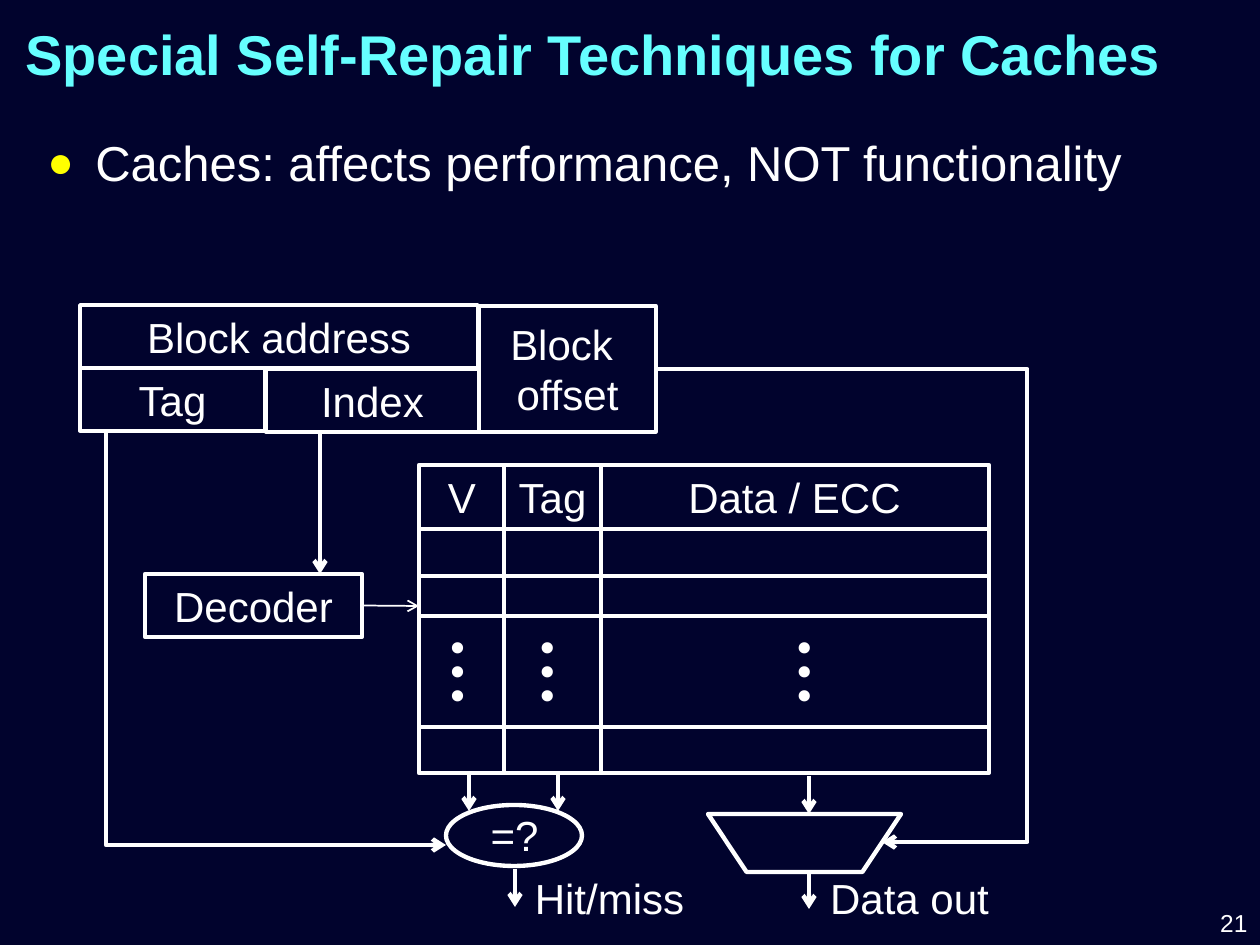
import pptx
import pptx.dml.color
import pptx.enum.shapes
import pptx.enum.text
import pptx.oxml.ns
import pptx.util
from lxml import etree

PX = 914400 / 126
WHITE = "FFFFFF"
SHAPE = pptx.enum.shapes.MSO_SHAPE
CONNECTOR = pptx.enum.shapes.MSO_CONNECTOR
ALIGN = pptx.enum.text.PP_ALIGN
ANCHOR = pptx.enum.text.MSO_ANCHOR
AUTO = pptx.enum.text.MSO_AUTO_SIZE
qn = pptx.oxml.ns.qn


def emu(*lengths):
    return [round(n * PX) for n in lengths]


def rgb(value):
    return pptx.dml.color.RGBColor.from_string(value)


def write(sp, lines, size=24, color=WHITE, align=ALIGN.CENTER, anchor=ANCHOR.TOP,
          font="Arial", bold=False, auto=AUTO.SHAPE_TO_FIT_TEXT, wrap=True):
    tf = sp.text_frame
    tf.word_wrap, tf.auto_size, tf.vertical_anchor = wrap, auto, anchor
    for i, line in enumerate(lines):
        p = tf.add_paragraph() if i else tf.paragraphs[0]
        p.alignment = align
        r = p.add_run()
        r.text = line
        r.font.name, r.font.size, r.font.bold = font, pptx.util.Pt(size), bold
        r.font.color.rgb = rgb(color)
    return tf


def text(s, box, *lines, **style):
    sp = s.shapes.add_textbox(*emu(*box))
    write(sp, lines, **style)
    return sp


def outline(s, kind, box, width, *lines, **style):
    """Unfilled shape with a white border and optional text."""
    sp = s.shapes.add_shape(kind, *emu(*box))
    sp.shadow.inherit = False
    sp.fill.background()
    sp.line.color.rgb = rgb(WHITE)
    sp.line.width = pptx.util.Pt(width)
    if lines:
        write(sp, lines, **style)
    return sp


def line(s, x1, y1, x2, y2, width=2.5, arrow=False, kind=CONNECTOR.STRAIGHT):
    c = s.shapes.add_connector(kind, *emu(x1, y1, x2, y2))
    c.line.color.rgb = rgb(WHITE)
    c.line.width = pptx.util.Pt(width)
    spPr = c._element.spPr
    etree.SubElement(spPr, qn("a:effectLst"))
    if arrow:
        etree.SubElement(spPr.find(qn("a:ln")), qn("a:tailEnd"), type="arrow")
    return c


def heading(s, x, y):
    box = text(s, (x, y, 1216, 88), "Special Self-Repair Techniques for Caches", size=32,
               color="66FFFF", align=ALIGN.LEFT, anchor=ANCHOR.MIDDLE, bold=True,
               auto=AUTO.NONE)
    box.text_frame.paragraphs[0].line_spacing = 0.9


def bullet(s, x, y):
    box = text(s, (x, y, 1263, 116), "Caches: affects performance, NOT functionality",
               size=28, align=ALIGN.LEFT, auto=AUTO.NONE)
    p = box.text_frame.paragraphs[0]
    p.line_spacing, p.space_before = 1.5, pptx.util.Pt(6)
    pPr = p._p.get_or_add_pPr()
    indent, = emu(48)
    pPr.set("marL", str(indent))
    pPr.set("indent", str(-indent))
    color = etree.SubElement(pPr, qn("a:buClr"))
    etree.SubElement(color, qn("a:srgbClr"), val="FFFF00")
    etree.SubElement(pPr, qn("a:buSzPct"), val="90000")
    etree.SubElement(pPr, qn("a:buFont"), typeface="Arial")
    etree.SubElement(pPr, qn("a:buChar"), char="●")


def address(s, x, y):
    outline(s, SHAPE.RECTANGLE, (x, y, 398, 63), 2, "Block address")
    outline(s, SHAPE.RECTANGLE, (x, y + 63, 185, 63), 2, "Tag")
    outline(s, SHAPE.RECTANGLE, (x + 186, y + 64, 213, 63), 2, "Index")
    outline(s, SHAPE.RECTANGLE, (x + 399, y + 1, 177, 126), 2, "Block ", "offset",
            anchor=ANCHOR.MIDDLE)


def cache(s, x, y, w, h):
    """Cache array: header, rows and dots for the rows left out."""
    outline(s, SHAPE.RECTANGLE, (x, y, w, h), 2.5)
    for dy in (64, 111, 151, 262):
        line(s, x, y + dy, x + w, y + dy)
    for dx in (85, 182):
        line(s, x + dx, y, x + dx, y + h)
    for dx, width, label in ((-3, 92, "V"), (77, 113, "Tag"), (182, 387, "Data / ECC")):
        text(s, (x + dx, y, width, 63), label)
    for dx in (9, 99, 356):
        dots = text(s, (x + dx, y + 159, 126, 127), "...", size=54, align=ALIGN.LEFT,
                    anchor=ANCHOR.MIDDLE, font="Times New Roman")
        dots.rotation = 90


def outputs(s, x, y):
    """Comparator and multiplexer below the cache, with their arrows."""
    outline(s, SHAPE.OVAL, (x, y + 32, 136, 61), 2.5)
    outline(s, SHAPE.FLOWCHART_MANUAL_OPERATION, (x + 262, y + 41, 193, 58), 2.5)
    text(s, (x + 1, y + 30, 135, 63), "=?")
    for dx, dy in ((23, 0), (112, 0), (69, 96), (363, 3), (363, 98)):
        line(s, x + dx, y + dy, x + dx, y + dy + 38, arrow=True)
    text(s, (x + 69, y + 93, 189, 63), "Hit/miss")
    text(s, (x + 369, y + 93, 189, 63), "Data out")


def tag_path(s, x, y, w, h):
    """Down from the tag field, then right to the comparator."""
    left, top = x + (w - h) / 2, y + (h - w) / 2
    c = line(s, left, top, left + h, top + w, arrow=True, kind=CONNECTOR.ELBOW)
    spPr = c._element.spPr
    spPr.find(qn("a:prstGeom")).set("prst", "bentConnector2")
    xfrm = spPr.find(qn("a:xfrm"))
    xfrm.set("rot", str(270 * 60000))
    xfrm.set("flipH", "1")


def offset_path(s, x, y, w, h):
    """From the block offset around the cache to the multiplexer."""
    c = line(s, x, y, x + w, y + h, arrow=True, kind=CONNECTOR.ELBOW)
    geom = c._element.spPr.find(qn("a:prstGeom"))
    guides = geom.find(qn("a:avLst"))
    if guides is None:
        guides = etree.SubElement(geom, qn("a:avLst"))
    etree.SubElement(guides, qn("a:gd"), name="adj1", fmla="val 164300")


def decoder(s, x, y):
    box = outline(s, SHAPE.RECTANGLE, (x, y, 217, 63), 2.5, "Decoder")
    line(s, x + 175, y - 142, x + 175, y, arrow=True)
    select = line(s, x + 217, y + 32, x + 274, y + 32, width=1, arrow=True)
    select.begin_connect(box, 3)


def main():
    prs = pptx.Presentation()
    prs.slide_width, prs.slide_height = emu(1260, 945)
    s = prs.slides.add_slide(prs.slide_layouts[6])
    s.background.fill.solid()
    s.background.fill.fore_color.rgb = rgb("01032D")
    heading(s, 13, 13)
    text(s, (1031, 901, 229, 44), "21", size=14, align=ALIGN.RIGHT,
         anchor=ANCHOR.MIDDLE, auto=AUTO.NONE, wrap=False)
    bullet(s, 35, 97)
    address(s, 80, 305)
    decoder(s, 145, 574)
    cache(s, 419, 465, 570, 308)
    outputs(s, 446, 773)
    tag_path(s, 106, 432, 340, 413)
    offset_path(s, 656, 369, 226, 473)
    prs.save("out.pptx")


if __name__ == "__main__":
    main()
